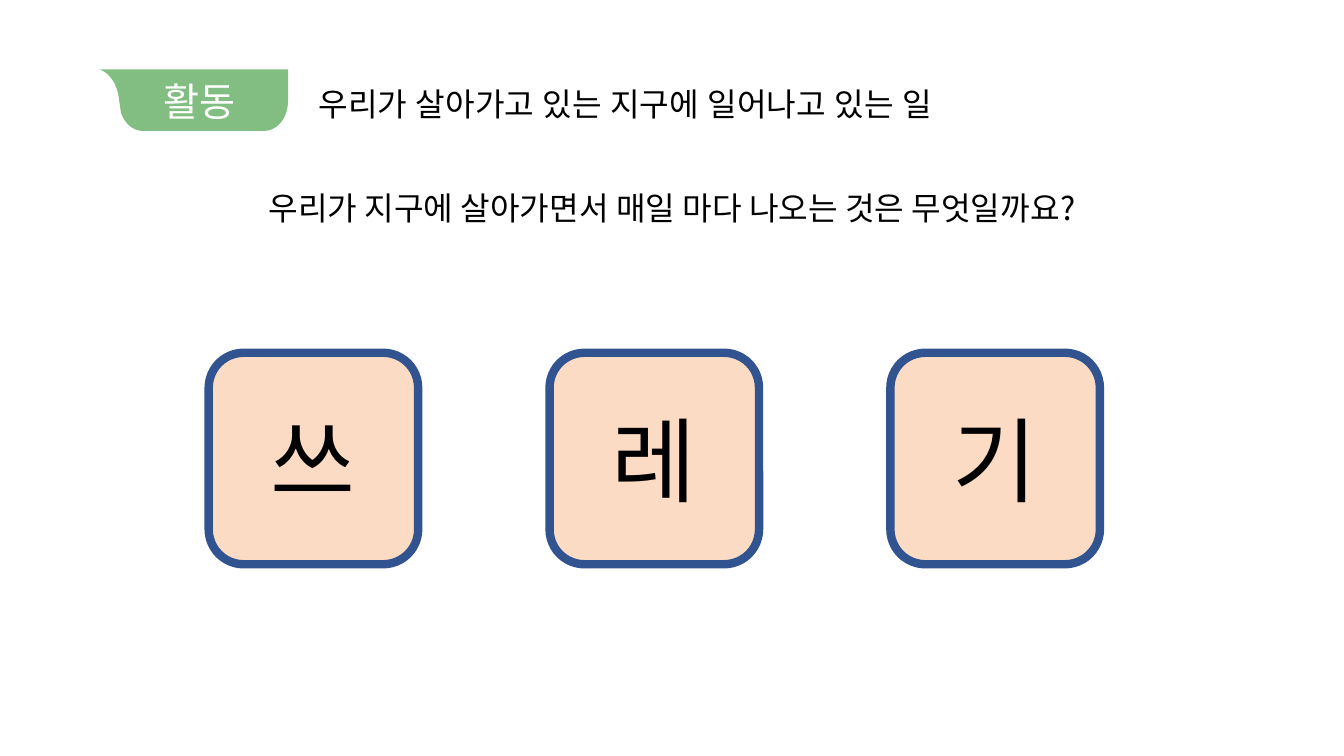
import pptx
import pptx.dml.color
import pptx.enum.shapes
import pptx.enum.text
import pptx.oxml
import pptx.oxml.ns
import pptx.util
from pptx.util import Cm

COLORS = {
    "banner": "82BE82",
    "banner_text": "FFFFFF",
    "text": "000000",
    "card": "FBDBC3",
    "card_border": "31538F",
}
ALIGN = pptx.enum.text.PP_ALIGN
ANCHOR = pptx.enum.text.MSO_ANCHOR
SYLLABLES = "쓰레기"
CARD_LEFT, CARD_TOP, CARD_PITCH = 5.26, 8.89, 8.59
CARD_WIDTH, CARD_HEIGHT = 5.28, 5.33


def rgb(name):
    return pptx.dml.color.RGBColor.from_string(COLORS[name])


def write_text(shape, text, *, size, font, color="text", align=ALIGN.CENTER,
               anchor=ANCHOR.TOP, wrap=True):
    frame = shape.text_frame
    frame.auto_size = pptx.enum.text.MSO_AUTO_SIZE.NONE
    frame.word_wrap = wrap
    frame.vertical_anchor = anchor
    paragraph = frame.paragraphs[0]
    paragraph.alignment = align
    run = paragraph.add_run()
    run.text = text
    run.font.size = pptx.util.Pt(size)
    run.font.name = font
    run.font.color.rgb = rgb(color)
    # Hangul takes its typeface from the East Asian font slot.
    east_asian = pptx.oxml.parse_xml(
        f'<a:ea {pptx.oxml.ns.nsdecls("a")} typeface="{font}"/>')
    run.font._element.append(east_asian)


def curve(start, control1, control2, end, steps=16):
    """Return points along a cubic Bezier curve, without its start."""
    points = []
    for step in range(1, steps + 1):
        t = step / steps
        weights = ((1 - t) ** 3, 3 * t * (1 - t) ** 2, 3 * t ** 2 * (1 - t), t ** 3)
        corners = (start, control1, control2, end)
        points.append(tuple(sum(w * c[axis] for w, c in zip(weights, corners))
                            for axis in (0, 1)))
    return points


def add_banner(slide):
    tip = (2.51, 1.75)
    right_edge, bottom_right = (7.26, 2.54), (6.65, 3.3)
    bottom_left, left_edge = (3.61, 3.3), (3.05, 2.84)
    tail = (3.0, 2.51)
    outline = [
        (7.26, 1.75), right_edge,
        *curve(right_edge, (7.26, 2.97), (6.99, 3.3), bottom_right),
        bottom_left,
        *curve(bottom_left, (3.35, 3.3), (3.15, 3.12), left_edge),
        tail,
        *curve(tail, (2.97, 2.16), (2.79, 1.85), tip),
    ]
    builder = slide.shapes.build_freeform(Cm(tip[0]), Cm(tip[1]))
    builder.add_line_segments([(Cm(x), Cm(y)) for x, y in outline], close=True)
    banner = builder.convert_to_shape()
    banner.shadow.inherit = False
    banner.fill.solid()
    banner.fill.fore_color.rgb = rgb("banner")
    banner.line.fill.background()
    label = slide.shapes.add_textbox(Cm(3.5), Cm(1.83), Cm(3.05), Cm(1.45))
    write_text(label, "활동", size=28, font="Lato", color="banner_text")
    slide.shapes.add_group_shape([banner, label])


def add_heading(slide, text):
    heading = slide.shapes.title
    heading.left, heading.top = Cm(7.77), Cm(2.01)
    heading.width, heading.height = Cm(16.15), Cm(1.24)
    write_text(heading, text, size=23, font="Lato", align=ALIGN.LEFT, wrap=False)


def add_question(slide, text):
    question = slide.shapes.add_textbox(Cm(5.77), Cm(4.62), Cm(22.35), Cm(1.24))
    write_text(question, text, size=23, font="Noto Sans CJK KR", wrap=False)


def add_card(slide, left, syllable):
    card = slide.shapes.add_shape(
        pptx.enum.shapes.MSO_SHAPE.ROUNDED_RECTANGLE,
        Cm(left), Cm(CARD_TOP), Cm(CARD_WIDTH), Cm(CARD_HEIGHT))
    card.shadow.inherit = False
    card.fill.solid()
    card.fill.fore_color.rgb = rgb("card")
    card.line.color.rgb = rgb("card_border")
    card.line.width = pptx.util.Pt(6)
    write_text(card, syllable, size=66, font="Roboto", anchor=ANCHOR.MIDDLE)


def main():
    deck = pptx.Presentation()
    deck.slide_width, deck.slide_height = Cm(33.87), Cm(19.05)
    slide = deck.slides.add_slide(deck.slide_layouts.get_by_name("Title Only"))
    add_banner(slide)
    add_heading(slide, "우리가 살아가고 있는 지구에 일어나고 있는 일")
    add_question(slide, "우리가 지구에 살아가면서 매일 마다 나오는 것은 무엇일까요?")
    for index, syllable in enumerate(SYLLABLES):
        add_card(slide, CARD_LEFT + index * CARD_PITCH, syllable)
    deck.save("out.pptx")


if __name__ == "__main__":
    main()
